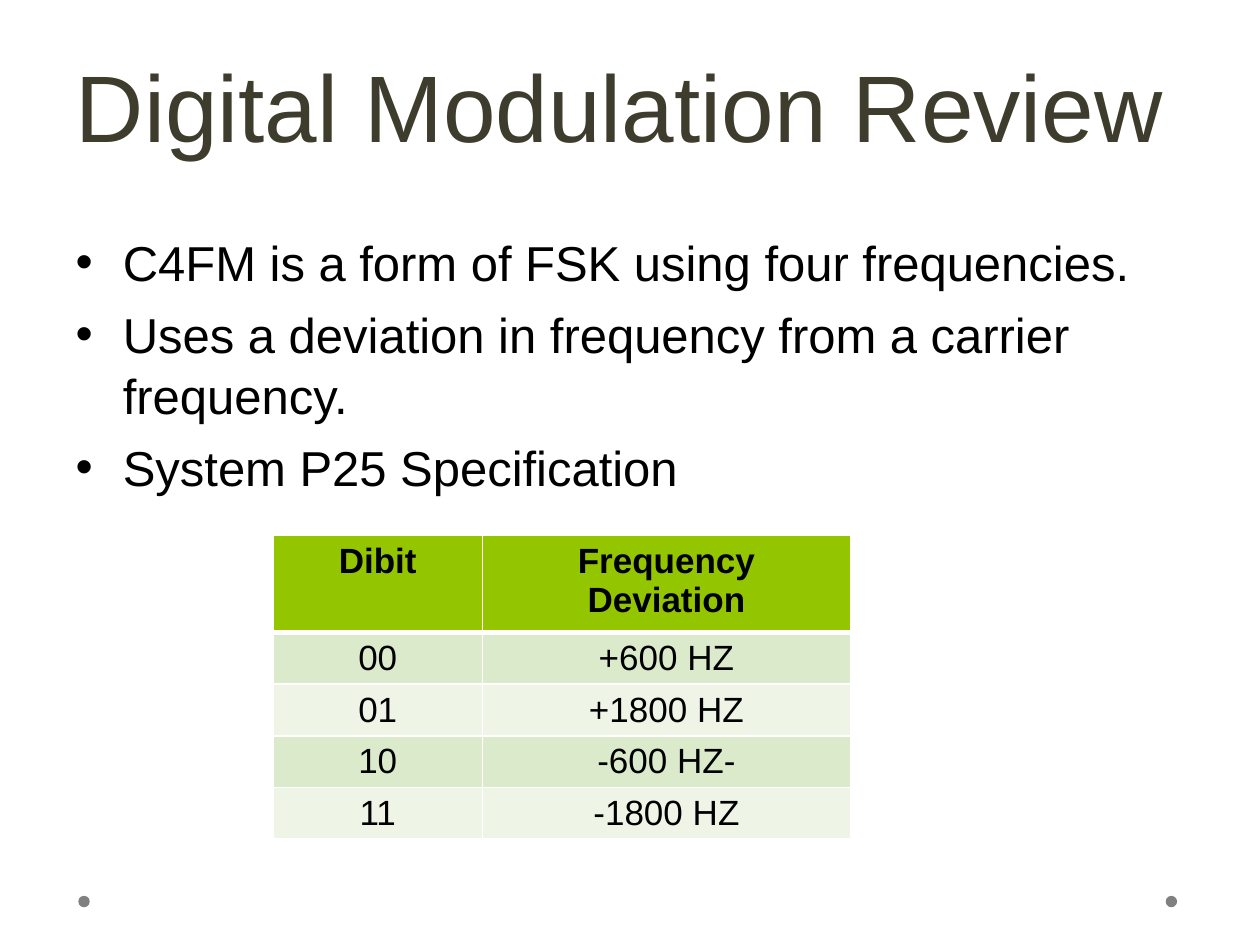
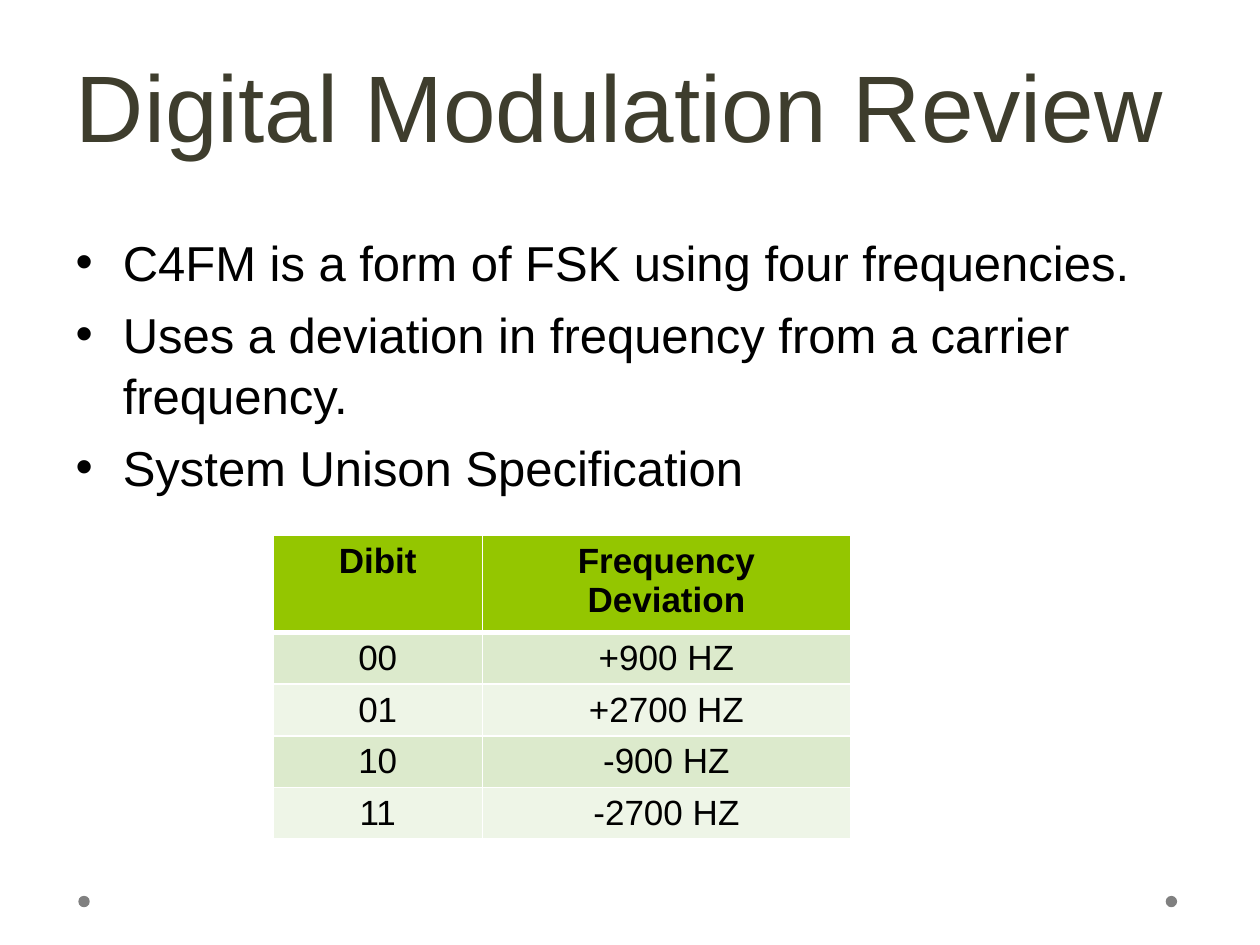
import pptx
import pptx.dml.color
import pptx.enum.shapes
import pptx.enum.text
import pptx.oxml
import pptx.oxml.ns
import pptx.util
from pptx.dml.color import RGBColor
from pptx.util import Cm, Pt

# Content
TITLE = "Digital Modulation Review"
SHARED_POINTS = [
    "C4FM is a form of FSK using four frequencies.",
    "Uses a deviation in frequency from a carrier frequency.",
]
TABLE_HEADER = ("Dibit", "Frequency Deviation")
DIBITS = ("00", "01", "10", "11")
SYSTEMS = [
    ("System P25 Specification", ("+600 HZ", "+1800 HZ", "-600 HZ-", "-1800 HZ")),
    ("System Unison Specification", ("+900 HZ", "+2700 HZ", "-900 HZ", "-2700 HZ")),
]

# Shared style
FONT = "Arial"
BLACK = RGBColor(0x00, 0x00, 0x00)
WHITE = RGBColor(0xFF, 0xFF, 0xFF)
OLIVE = RGBColor(0x3E, 0x3D, 0x2D)
GRAY = RGBColor(0x80, 0x80, 0x80)
HEADER_GREEN = RGBColor(0x94, 0xC6, 0x00)
BAND_GREENS = (RGBColor(0xDC, 0xEA, 0xCC), RGBColor(0xEE, 0xF5, 0xE7))

# Layout
TITLE_AREA = (Cm(1.06), Cm(0), Cm(22.86), Cm(4.45))
BODY_AREA = (Cm(1.27), Cm(4.5), Cm(22.86), Cm(12.52))
TABLE_LEFT, TABLE_TOP = Cm(5.5), Cm(10.8)
COLUMN_WIDTHS = (Cm(4.23), Cm(7.41))
HEADER_HEIGHT, ROW_HEIGHT = Cm(1.95), Cm(1.04)
CELL_MARGIN = Cm(0.3)
DOT_LEFTS, DOT_TOP, DOT_SIZE = (Cm(1.58), Cm(23.5)), Cm(18.06), Cm(0.23)


def set_font(paragraph, size, color, bold=False):
    font = paragraph.font
    font.name, font.size, font.bold = FONT, Pt(size), bold
    font.color.rgb = color


def place(holder, area):
    holder.left, holder.top, holder.width, holder.height = area
    frame = holder.text_frame
    frame.auto_size = pptx.enum.text.MSO_AUTO_SIZE.NONE
    return frame


def add_dots_to_master(deck, page):
    """Draw the two footer dots on a page, then move them to the master."""
    for number, left in enumerate(DOT_LEFTS):
        dot = page.shapes.add_shape(
            pptx.enum.shapes.MSO_SHAPE.OVAL, left, DOT_TOP, DOT_SIZE, DOT_SIZE)
        dot.shadow.inherit = False
        dot.fill.solid()
        dot.fill.fore_color.rgb = GRAY
        dot.line.fill.background()
        dot.element.nvSpPr.cNvPr.set("id", str(20 + number))
        deck.slide_master.shapes.element.append(dot.element)


def set_borders(cell, top, bottom):
    widths = {"lnL": 1, "lnR": 1, "lnT": top, "lnB": bottom}
    properties = cell._tc.get_or_add_tcPr()
    for side, points in widths.items():
        properties.append(pptx.oxml.parse_xml(
            f'<a:{side} {pptx.oxml.ns.nsdecls("a")} w="{Pt(points)}">'
            f'<a:solidFill><a:srgbClr val="{WHITE}"/></a:solidFill></a:{side}>'))


def add_deviation_table(page, deviations):
    rows = [TABLE_HEADER, *zip(DIBITS, deviations)]
    heights = [HEADER_HEIGHT] + [ROW_HEIGHT] * len(DIBITS)
    table = page.shapes.add_table(
        len(rows), len(COLUMN_WIDTHS), TABLE_LEFT, TABLE_TOP,
        sum(COLUMN_WIDTHS), sum(heights)).table
    for column, width in zip(table.columns, COLUMN_WIDTHS):
        column.width = width
    for index, (texts, height) in enumerate(zip(rows, heights)):
        table.rows[index].height = height
        is_header = index == 0
        for cell, text in zip(table.rows[index].cells, texts):
            set_borders(cell, 3 if index == 1 else 1, 3 if is_header else 1)
            cell.fill.solid()
            cell.fill.fore_color.rgb = (
                HEADER_GREEN if is_header else BAND_GREENS[(index - 1) % 2])
            cell.margin_left = cell.margin_right = CELL_MARGIN
            cell.text = text
            paragraph = cell.text_frame.paragraphs[0]
            paragraph.alignment = pptx.enum.text.PP_ALIGN.CENTER
            set_font(paragraph, 20, BLACK, is_header)


def add_system_page(deck, system, deviations):
    page = deck.slides.add_slide(deck.slide_layouts[1])
    title, body = page.placeholders

    # Title
    frame = place(title, TITLE_AREA)
    frame.text = TITLE
    frame.vertical_anchor = pptx.enum.text.MSO_ANCHOR.MIDDLE
    heading = frame.paragraphs[0]
    heading.alignment = pptx.enum.text.PP_ALIGN.CENTER
    heading.line_spacing = Pt(58)
    set_font(heading, 54, OLIVE)

    # Bullets
    frame = place(body, BODY_AREA)
    frame.text = "\n".join([*SHARED_POINTS, system])
    for index, paragraph in enumerate(frame.paragraphs):
        paragraph.line_spacing = 1.05
        paragraph.space_before = Pt(5.6 if index else 0)
        set_font(paragraph, 28, BLACK)

    add_deviation_table(page, deviations)
    return page


def main():
    deck = pptx.Presentation()
    deck.slide_width, deck.slide_height = Cm(25.4), Cm(19.05)
    pages = [add_system_page(deck, *system) for system in SYSTEMS]
    add_dots_to_master(deck, pages[0])
    deck.save("out.pptx")


if __name__ == "__main__":
    main()
